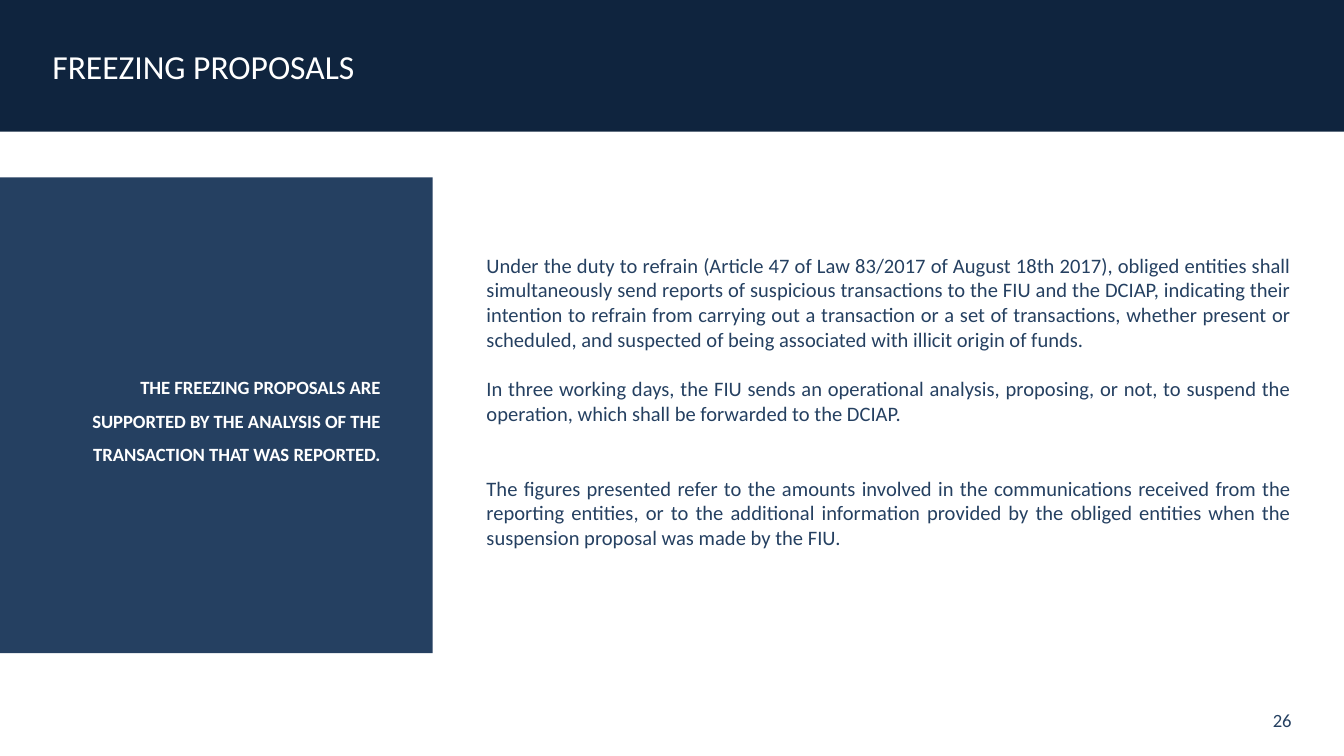
from pptx import Presentation
from pptx.dml.color import RGBColor
from pptx.enum.shapes import MSO_SHAPE
from pptx.enum.text import MSO_ANCHOR, PP_ALIGN
from pptx.util import Inches, Pt

NAVY = "0F243E"
BLUE = "254061"
WHITE = "FFFFFF"
FONT = "Calibri"
SLIDE_WIDTH = Inches(10)
SLIDE_HEIGHT = SLIDE_WIDTH * 9 // 16
SIDE_MARGIN = 0.39
BODY_SIZE = 11
BLANK_LINE = 13.4  # height in points of one body line

TITLE = "FREEZING PROPOSALS"
KEY_MESSAGE = (
    "THE FREEZING PROPOSALS ARE SUPPORTED BY THE ANALYSIS OF THE "
    "TRANSACTION THAT WAS REPORTED."
)
# Each paragraph with the number of line heights left free above it
EXPLANATION = [
    ("Under the duty to refrain (Article 47 of Law 83/2017 of August 18th 2017), "
     "obliged entities shall simultaneously send reports of suspicious transactions "
     "to the FIU and the DCIAP, indicating their intention to refrain from carrying "
     "out a transaction or a set of transactions, whether present or scheduled, and "
     "suspected of being associated with illicit origin of funds.", 0),
    ("In three working days, the FIU sends an operational analysis, proposing, or "
     "not, to suspend the operation, which shall be forwarded to the DCIAP.", 1),
    ("The figures presented refer to the amounts involved in the communications "
     "received from the reporting entities, or to the additional information "
     "provided by the obliged entities when the suspension proposal was made by "
     "the FIU.", 2),
]


def rgb(hex_color):
    return RGBColor.from_string(hex_color)


def set_frame(frame, anchor, vertical_margin=0.1):
    frame.word_wrap = True
    frame.vertical_anchor = anchor
    frame.margin_left = frame.margin_right = Inches(SIDE_MARGIN)
    frame.margin_top = frame.margin_bottom = Inches(vertical_margin)


def write(paragraph, text, size, color, align, bold=False):
    paragraph.text = text
    paragraph.alignment = align
    for run in paragraph.runs:
        run.font.name = FONT
        run.font.size = Pt(size)
        run.font.bold = bold
        run.font.color.rgb = rgb(color)


def add_panel(slide, left, top, width, height, fill, vertical_margin=0.1):
    """Add a borderless filled rectangle and return its text frame."""
    panel = slide.shapes.add_shape(
        MSO_SHAPE.RECTANGLE, Inches(left), Inches(top), Inches(width), Inches(height))
    panel.shadow.inherit = False
    panel.fill.solid()
    panel.fill.fore_color.rgb = rgb(fill)
    panel.line.fill.background()
    set_frame(panel.text_frame, MSO_ANCHOR.MIDDLE, vertical_margin)
    return panel.text_frame


def add_text(slide, left, top, width, height, anchor):
    """Add a text box and return its text frame."""
    box = slide.shapes.add_textbox(
        Inches(left), Inches(top), Inches(width), Inches(height))
    set_frame(box.text_frame, anchor)
    return box.text_frame


def add_explanation(slide):
    frame = add_text(slide, 3.23, 1.78, 6.77, 2.42, MSO_ANCHOR.TOP)
    for index, (text, blank_lines) in enumerate(EXPLANATION):
        paragraph = frame.add_paragraph() if index else frame.paragraphs[0]
        write(paragraph, text, BODY_SIZE, BLUE, PP_ALIGN.JUSTIFY)
        paragraph.space_before = Pt(blank_lines * BLANK_LINE)


def main():
    presentation = Presentation()
    presentation.slide_width = SLIDE_WIDTH
    presentation.slide_height = SLIDE_HEIGHT
    slide = presentation.slides.add_slide(presentation.slide_layouts[6])

    header = add_panel(slide, 0, 0, 10, 0.98, NAVY, vertical_margin=0.2)
    write(header.paragraphs[0], TITLE, 18, WHITE, PP_ALIGN.LEFT)

    add_explanation(slide)

    page_number = add_text(slide, 8.59, 5.21, 1.41, 0.3, MSO_ANCHOR.MIDDLE)
    write(page_number.paragraphs[0], "26", 10, BLUE, PP_ALIGN.RIGHT)

    key_message = add_panel(slide, 0, 1.32, 3.22, 3.54, BLUE)
    write(key_message.paragraphs[0], KEY_MESSAGE, 10, WHITE, PP_ALIGN.RIGHT, bold=True)
    key_message.paragraphs[0].line_spacing = 1.5

    presentation.save("out.pptx")


if __name__ == "__main__":
    main()
